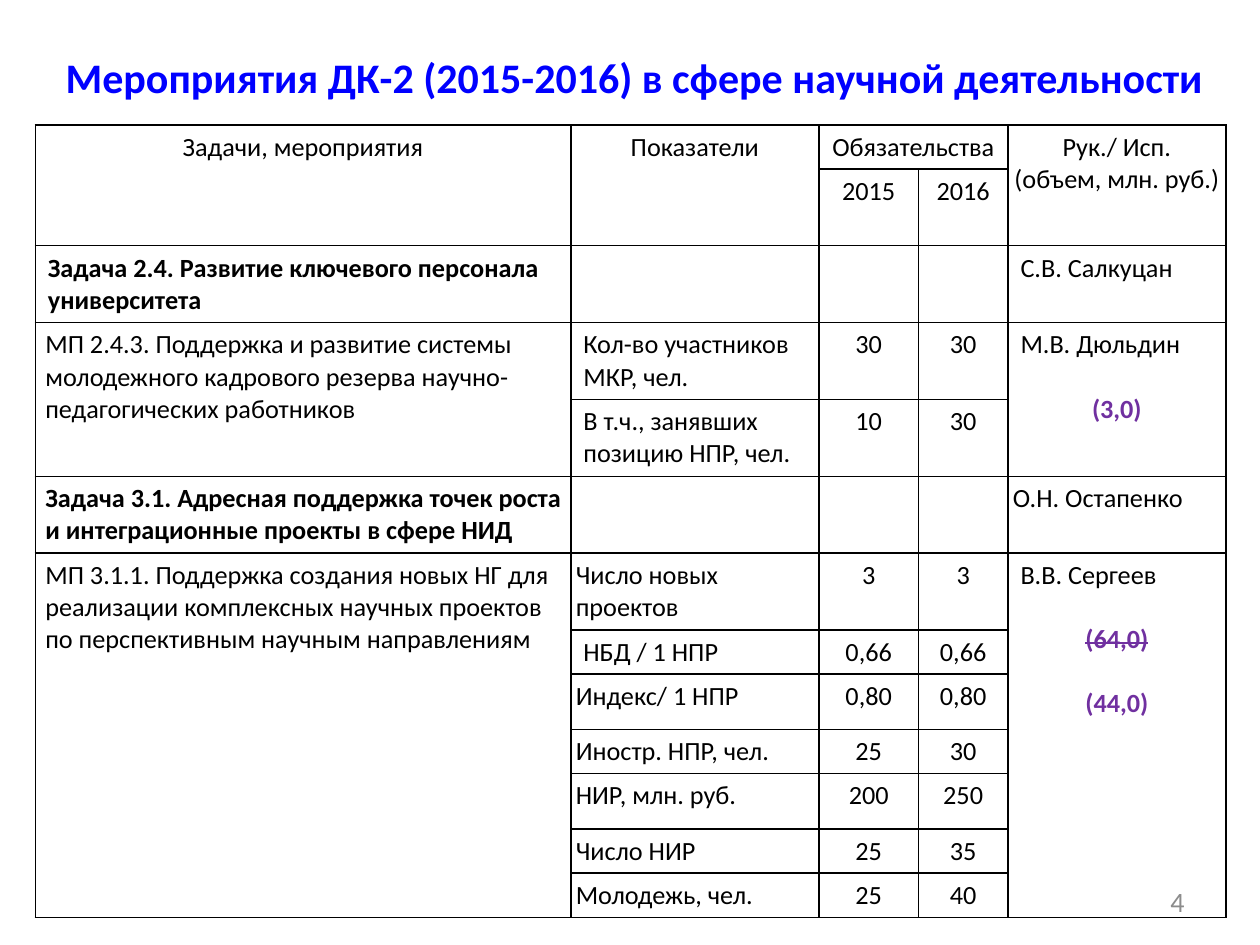
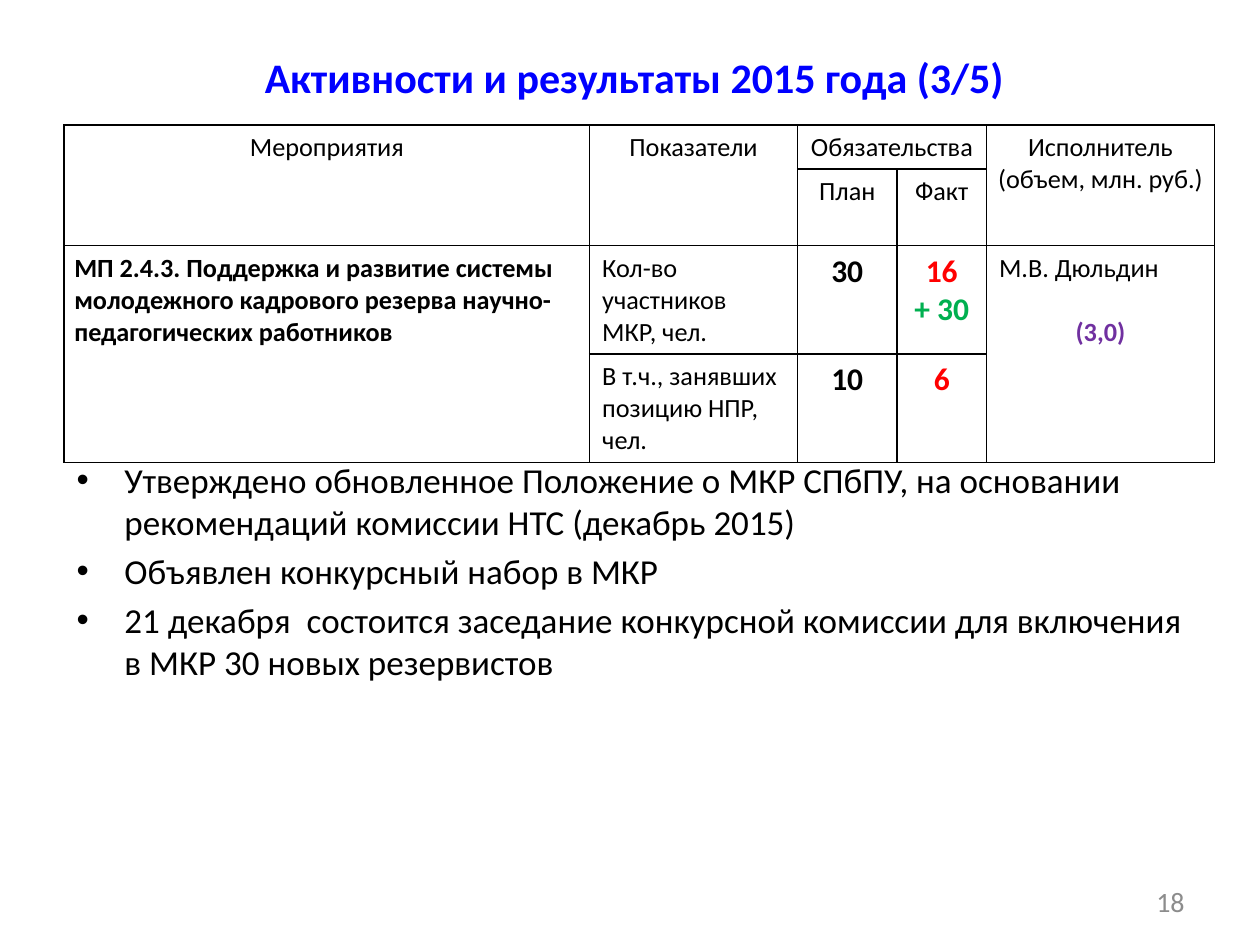
import pptx
import pptx.dml.color
import pptx.enum.text
import pptx.oxml
import pptx.oxml.ns
import pptx.util
from pptx.util import Inches

RGBColor = pptx.dml.color.RGBColor
Pt = pptx.util.Pt
ALIGN = pptx.enum.text.PP_ALIGN
ANCHOR = pptx.enum.text.MSO_ANCHOR

BLACK = RGBColor(0, 0, 0)
BLUE = RGBColor(0, 0, 255)
PURPLE = RGBColor(0x70, 0x30, 0xA0)
RED = RGBColor(255, 0, 0)
GREEN = RGBColor(0, 0xB0, 0x50)
GRAY = RGBColor(0x8C, 0x8C, 0x8C)

TIGHT = (0.04, 0.04)
TASK = (0.08, 0.04)
LINE = 18.3
AMOUNT = dict(align=ALIGN.CENTER, color=PURPLE, bold=True, before=LINE)
RESERVE = "МП 2.4.3. Поддержка и развитие системы молодежного кадрового резерва научно-педагогических работников"
MEMBERS = "Кол-во участников МКР, чел."
POSITIONS = "В т.ч., занявших позицию НПР, чел."


def write(frame, text, size=15, color=BLACK, bold=False, align=ALIGN.LEFT, before=0, strike=False):
    paragraph = frame.paragraphs[0] if not frame.text else frame.add_paragraph()
    paragraph.alignment = align
    paragraph.space_before = Pt(before)
    run = paragraph.add_run()
    run.text = text
    run.font.name = "Calibri"
    run.font.size = Pt(size)
    run.font.bold = bold
    run.font.color.rgb = color
    if strike:
        run._r.get_or_add_rPr().set("strike", "sngStrike")
    return paragraph


class Deck:
    def __init__(self):
        self.presentation = pptx.Presentation()
        self.presentation.slide_width = Inches(10)
        self.presentation.slide_height = Inches(7.5)
        self.slide = None
        self.table = None

    def page(self, title, number):
        self.slide = self.presentation.slides.add_slide(self.presentation.slide_layouts[6])
        heading = self.box(0.35, 0.29, 9.37, 0.63, ANCHOR.MIDDLE)
        write(heading, title, size=24, color=BLUE, bold=True, align=ALIGN.CENTER)
        return number

    def number(self, value):
        footer = self.box(7.17, 6.95, 2.33, 0.4, ANCHOR.MIDDLE)
        write(footer, str(value), size=16, color=GRAY, align=ALIGN.RIGHT)

    def box(self, left, top, width, height, anchor=ANCHOR.TOP):
        frame = self.slide.shapes.add_textbox(
            Inches(left), Inches(top), Inches(width), Inches(height)).text_frame
        frame.word_wrap = True
        frame.vertical_anchor = anchor
        return frame

    def grid(self, left, widths, heights):
        self.table = self.slide.shapes.add_table(
            len(heights), len(widths), Inches(left), Inches(0.99),
            Inches(sum(widths)), Inches(sum(heights))).table
        self.table.first_row = False
        self.table.horz_banding = False
        for column, width in zip(self.table.columns, widths):
            column.width = Inches(width)
        for row, height in zip(self.table.rows, heights):
            row.height = Inches(height)
        for cell in self.table.iter_cells():
            self.border(cell)
            cell.fill.background()

    def border(self, cell):
        properties = cell._tc.get_or_add_tcPr()
        for side in ("lnL", "lnR", "lnT", "lnB"):
            properties.append(pptx.oxml.parse_xml(
                f'<a:{side} {pptx.oxml.ns.nsdecls("a")} w="12700"><a:solidFill>'
                f'<a:srgbClr val="{BLACK}"/></a:solidFill></a:{side}>'))

    def cell(self, row, column, text, span=(1, 1), margins=(0.1, 0.1), **style):
        cell = self.table.cell(row, column)
        if span != (1, 1):
            cell.merge(self.table.cell(row + span[0] - 1, column + span[1] - 1))
        cell.margin_left, cell.margin_right = map(Inches, margins)
        write(cell.text_frame, text, **style)
        return cell.text_frame

    def header(self, tasks, years, leader):
        center = ALIGN.CENTER
        self.cell(0, 0, tasks, span=(2, 1), align=center)
        self.cell(0, 1, "Показатели", span=(2, 1), align=center)
        self.cell(0, 2, "Обязательства", span=(1, 2), margins=TIGHT, align=center)
        people = self.cell(0, 4, leader, span=(2, 1), margins=TIGHT, align=center)
        write(people, "(объем, млн. руб.)", align=center)
        for column, year in enumerate(years, 2):
            self.cell(1, column, year, align=center)

    def indicator(self, row, name, plan, fact, margins=(0.1, 0.1), fact_color=BLACK, **style):
        self.cell(row, 1, name, margins=margins)
        self.cell(row, 2, plan, align=ALIGN.CENTER, **style)
        return self.cell(row, 3, fact, align=ALIGN.CENTER, color=fact_color, **style)

    def leader(self, row, name, amount, rows):
        people = self.cell(row, 4, name, span=(rows, 1))
        write(people, amount, **AMOUNT)

    def bullets(self, items):
        frame = self.box(0.51, 3.59, 9, 2.05)
        for item in items:
            paragraph = write(frame, item, size=20, before=4)
            properties = paragraph._p.get_or_add_pPr()
            properties.set("marL", str(Inches(0.38)))
            properties.set("indent", str(Inches(-0.38)))
            namespace = pptx.oxml.ns.nsdecls("a")
            properties.append(pptx.oxml.parse_xml(f'<a:buFont {namespace} typeface="Arial"/>'))
            properties.append(pptx.oxml.parse_xml(f'<a:buChar {namespace} char="•"/>'))


def plan_slide(deck):
    deck.page("Мероприятия ДК-2 (2015-2016) в сфере научной деятельности", 4)
    deck.grid(0.28, [4.25, 1.97, 0.79, 0.71, 1.73],
              [0.35] + [0.61] * 6 + [0.35, 0.44, 0.35, 0.44, 0.35, 0.35])
    deck.header("Задачи, мероприятия", ["2015", "2016"], "Рук./ Исп.")
    deck.cell(2, 0, "Задача 2.4. Развитие ключевого персонала университета", bold=True)
    deck.cell(2, 4, "С.В. Салкуцан")
    deck.cell(3, 0, RESERVE, span=(2, 1), margins=TASK)
    deck.indicator(3, MEMBERS, "30", "30")
    deck.indicator(4, POSITIONS, "10", "30")
    deck.leader(3, "М.В. Дюльдин", "(3,0)", 2)
    deck.cell(5, 0, "Задача 3.1. Адресная поддержка точек роста и интеграционные проекты в сфере НИД",
              margins=TASK, bold=True)
    deck.cell(5, 4, "О.Н. Остапенко", margins=TIGHT)
    deck.cell(6, 0, "МП 3.1.1. Поддержка создания новых НГ для реализации комплексных научных "
              "проектов по перспективным научным направлениям", span=(7, 1), margins=(0.08, 0.1))
    indicators = [
        ("Число новых проектов", "3", "3", (0.04, 0.1)),
        ("НБД / 1 НПР", "0,66", "0,66", (0.1, 0.1)),
        ("Индекс/ 1 НПР", "0,80", "0,80", TIGHT),
        ("Иностр. НПР, чел.", "25", "30", TIGHT),
        ("НИР, млн. руб.", "200", "250", TIGHT),
        ("Число НИР", "25", "35", TIGHT),
        ("Молодежь, чел.", "25", "40", TIGHT),
    ]
    for row, (name, first, second, margins) in enumerate(indicators, 6):
        deck.indicator(row, name, first, second, margins)
    people = deck.cell(6, 4, "В.В. Сергеев", span=(7, 1))
    write(people, "(64,0)", strike=True, **AMOUNT)
    write(people, "(44,0)", **AMOUNT)
    deck.number(4)


def results_slide(deck):
    deck.page("Активности и результаты 2015 года (3/5)", 18)
    deck.grid(0.51, [4.17, 1.65, 0.79, 0.71, 1.81], [0.35, 0.61, 0.86, 0.86])
    deck.header("Мероприятия", ["План", "Факт"], "Исполнитель")
    deck.cell(2, 0, RESERVE, span=(2, 1), margins=TASK, bold=True)
    strong = dict(size=18, bold=True)
    fact = deck.indicator(2, MEMBERS, "30", "16", fact_color=RED, **strong)
    write(fact, "+ 30", color=GREEN, align=ALIGN.CENTER, **strong)
    deck.indicator(3, POSITIONS, "10", "6", fact_color=RED, **strong)
    deck.leader(2, "М.В. Дюльдин", "(3,0)", 2)
    deck.number(18)
    deck.bullets([
        "Утверждено обновленное Положение о МКР СПбПУ, на основании рекомендаций "
        "комиссии НТС (декабрь 2015)",
        "Объявлен конкурсный набор в МКР",
        "21 декабря  состоится заседание конкурсной комиссии для включения в МКР "
        "30 новых резервистов",
    ])


def main():
    deck = Deck()
    plan_slide(deck)
    results_slide(deck)
    deck.presentation.save("out.pptx")


if __name__ == "__main__":
    main()
